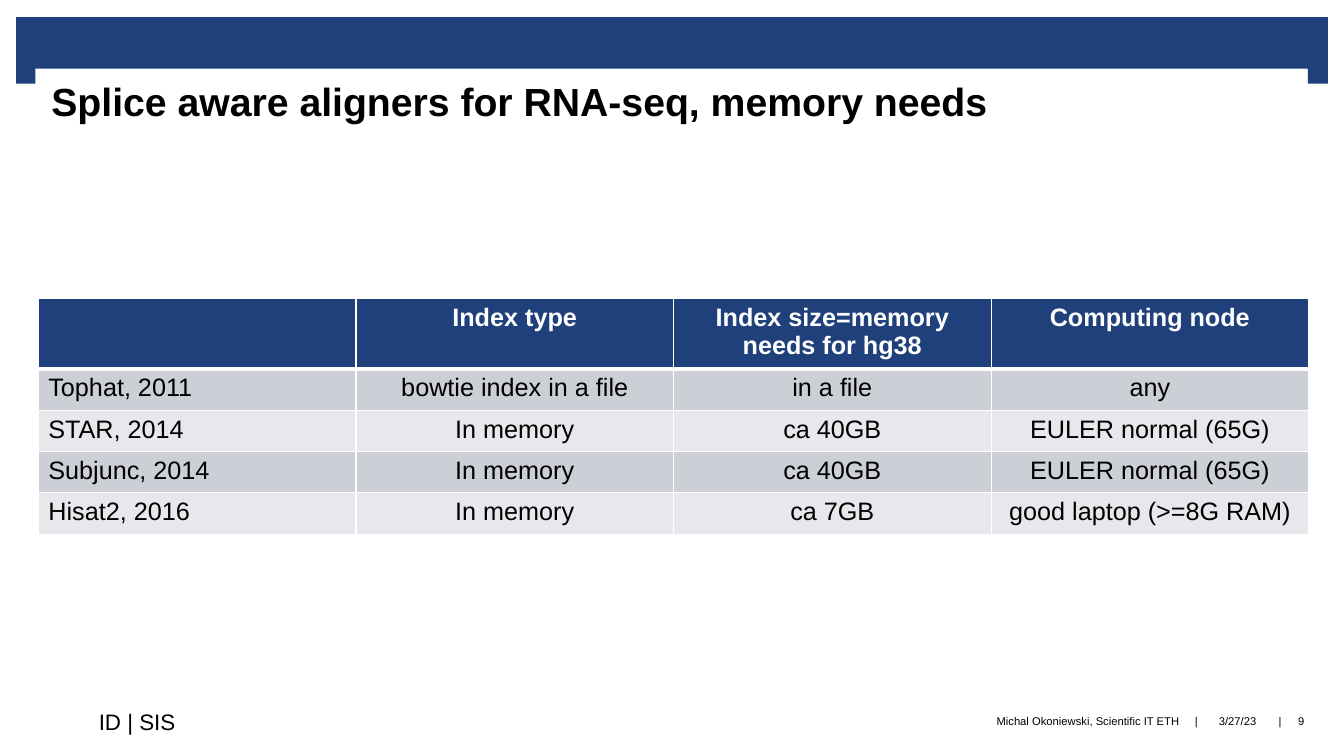
from lxml import etree
from pptx import Presentation
from pptx.dml.color import RGBColor
from pptx.enum.shapes import MSO_SHAPE
from pptx.enum.text import MSO_ANCHOR, PP_ALIGN
from pptx.oxml.ns import qn
from pptx.util import Pt

LEFT, MID, RIGHT = PP_ALIGN.LEFT, PP_ALIGN.CENTER, PP_ALIGN.RIGHT
TOP, CENTRE = MSO_ANCHOR.TOP, MSO_ANCHOR.MIDDLE
RECT = MSO_SHAPE.RECTANGLE
NAVY, WHITE, BLACK = "1F407A", "FFFFFF", "000000"
BANDS = ("CDCFD7", "E8E8EC")
FONT = "Arial"
UNIT = 9144  # EMU per px, 100 px to the inch

TITLE = "Splice aware aligners for RNA-seq, memory needs"
ROWS = [
    ("", "Index type", "Index size=memory needs for hg38", "Computing node"),
    ("Tophat, 2011", "bowtie index in a file", "in a file", "any"),
    ("STAR, 2014", "In memory", "ca 40GB", "EULER normal (65G)"),
    ("Subjunc, 2014", "In memory", "ca 40GB", "EULER normal (65G)"),
    ("Hisat2, 2016", "In memory", "ca 7GB", "good laptop (>=8G RAM)"),
]
BARS = [(16, 17, 1301, 52), (16, 65, 20, 18), (1297, 65, 20, 18)]
# text, left, width, size, alignment
FOOTER = [
    ("ID | SIS", 98, 120, 16, LEFT),
    ("Michal Okoniewski, Scientific IT ETH", 666, 504, 8, RIGHT),
    ("|", 1179, 15, 8, MID),
    ("3/27/23", 1194, 67, 8, MID),
    ("|", 1262, 15, 8, MID),
    ("9", 1271, 39, 8, MID),
]
FOOT_TOP, FOOT_HIGH = 690, 51
TITLE_BOX = (35, 68, 1262, 106)
TABLE_LEFT, TABLE_TOP, COL_WIDE = 38, 296, 315
HEAD_HIGH, ROW_HIGH = 66, 41


def px(*nums):
    return [round(n * UNIT) for n in nums]


def paint(fill, tint):
    fill.solid()
    fill.fore_color.rgb = RGBColor.from_string(tint)


def write(frame, text, size, align=LEFT, tint=BLACK, bold=False):
    para = frame.paragraphs[0]
    para.alignment = align
    run = para.add_run()
    run.text = text
    font = run.font
    font.name, font.size, font.bold = FONT, Pt(size), bold
    font.color.rgb = RGBColor.from_string(tint)


def inset(frame, left, top, right, low):
    (frame.margin_left, frame.margin_top,
     frame.margin_right, frame.margin_bottom) = px(left, top, right, low)


def edge(cell, side, width):
    """Add a white border line; must run before the cell is filled."""
    line = etree.SubElement(cell._tc.get_or_add_tcPr(), qn("a:" + side),
                            w=str(Pt(width)))
    fill = etree.SubElement(line, qn("a:solidFill"))
    etree.SubElement(fill, qn("a:srgbClr"), val=WHITE)


def add_bars(slide):
    for box in BARS:
        bar = slide.shapes.add_shape(RECT, *px(*box))
        bar.shadow.inherit = False
        paint(bar.fill, NAVY)
        bar.line.fill.background()


def add_footer(slide):
    for text, left, wide, size, align in FOOTER:
        box = slide.shapes.add_textbox(*px(left, FOOT_TOP, wide, FOOT_HIGH))
        frame = box.text_frame
        frame.word_wrap = True
        frame.vertical_anchor = CENTRE
        inset(frame, 0, 0, 0, 0)
        write(frame, text, size, align)


def add_grid(slide):
    count, cols = len(ROWS), len(ROWS[0])
    high = HEAD_HIGH + (count - 1) * ROW_HIGH
    table = slide.shapes.add_table(
        count, cols, *px(TABLE_LEFT, TABLE_TOP, cols * COL_WIDE, high)).table
    for col in table.columns:
        col.width = px(COL_WIDE)[0]
    for r, row in enumerate(ROWS):
        head = r == 0
        table.rows[r].height = px(HEAD_HIGH if head else ROW_HIGH)[0]
        for c, text in enumerate(row):
            cell = table.cell(r, c)
            for side in ("lnL", "lnR", "lnT", "lnB"):
                thick = (head and side == "lnB") or (r == 1 and side == "lnT")
                edge(cell, side, 3 if thick else 1)
            paint(cell.fill, NAVY if head else BANDS[(r - 1) % 2])
            if text:
                write(cell.text_frame, text, 18, MID if head or c else LEFT,
                      WHITE if head else BLACK, head)


def set_title(slide):
    title = slide.shapes.title
    title.left, title.top, title.width, title.height = px(*TITLE_BOX)
    paint(title.fill, WHITE)
    frame = title.text_frame
    frame.word_wrap = True
    frame.vertical_anchor = TOP
    inset(frame, 16, 9, 16, 0)
    write(frame, TITLE, 28, bold=True)
    slide.shapes._spTree.append(title._element)  # bring to front


def main():
    deck = Presentation()
    deck.slide_width, deck.slide_height = px(1333, 750)
    slide = deck.slides.add_slide(deck.slide_layouts[5])
    add_bars(slide)
    add_footer(slide)
    add_grid(slide)
    set_title(slide)
    deck.save("out.pptx")


if __name__ == "__main__":
    main()
